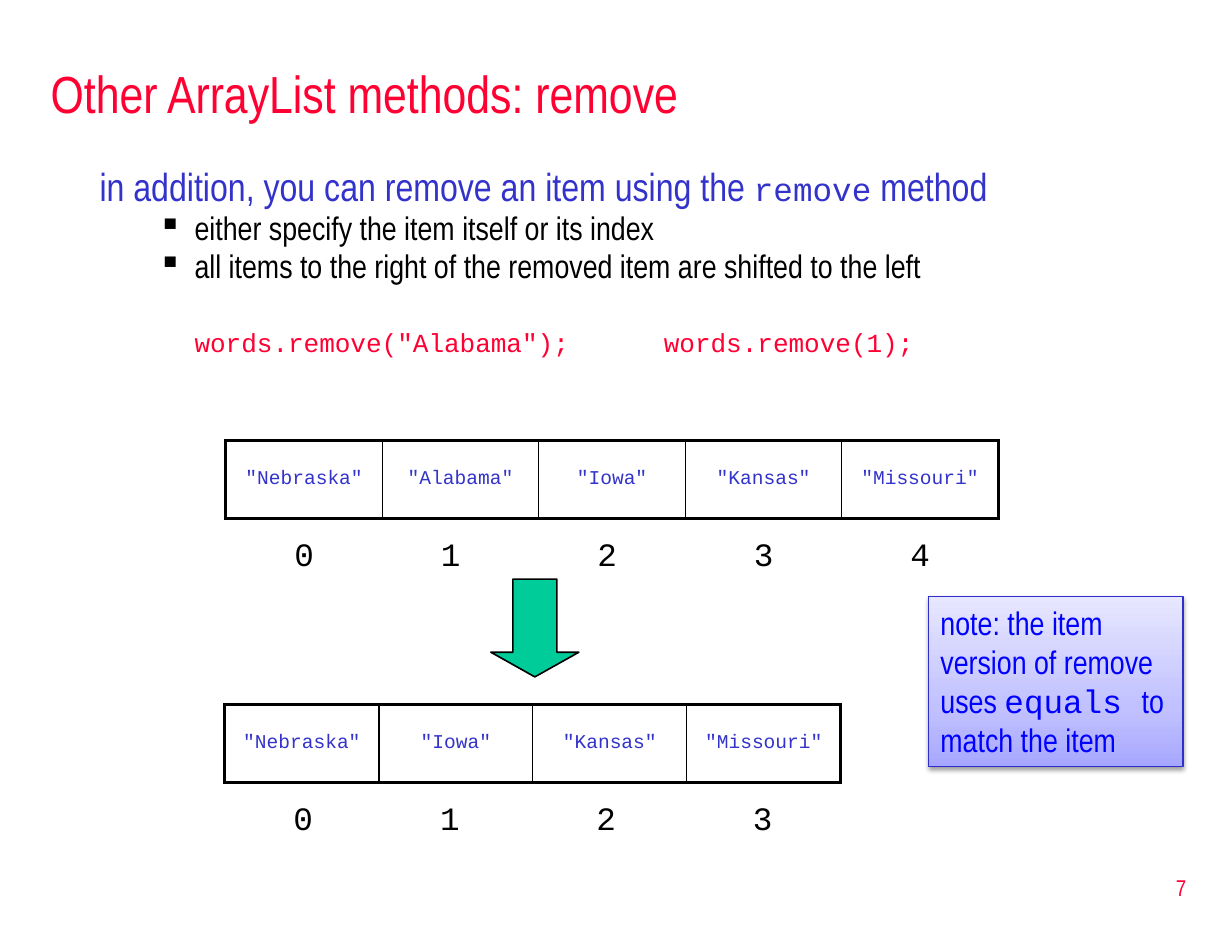
from lxml.etree import SubElement
from pptx import Presentation
from pptx.dml.color import RGBColor as Rgb
from pptx.enum.shapes import MSO_SHAPE as Shape
from pptx.enum.text import MSO_ANCHOR as Anchor, PP_ALIGN as Align
from pptx.oxml import parse_xml
from pptx.oxml.ns import nsdecls, qn
from pptx.util import Inches, Pt

SANS, MONO = "Arial Narrow", "Courier New"
HUES = {
    "red": "FF0033", "blue": "3333CC", "black": "000000", "green": "00CC99",
    "note": "0000FF", "edge": "2E2ECB",
    "deep": "A7A7FF", "mid": "C1C1FF", "pale": "E7E7FF",
}


def hue(name):
    return Rgb.from_string(HUES[name])


def unit(n):
    """Length of n grid cells; the slide is 126 by 96 cells."""
    return Inches(n / 12)


def area(*cells):
    return [unit(n) for n in cells]


def style(font, size, name, color):
    font.size, font.name = Pt(size), name
    font.color.rgb = hue(color)


def write(para, runs, size, color, name=SANS):
    """Fill a paragraph; a run is a text or a (text, font, size) tuple."""
    style(para.font, size, name, color)
    for item in runs:
        text, face, pts = (item, name, size) if isinstance(item, str) else item
        run = para.add_run()
        run.text = text
        style(run.font, pts, face, color)


def label(slide, box, text, size, color, name=SANS, align=Align.LEFT, anchor=Anchor.TOP):
    frame = slide.shapes.add_textbox(*area(*box)).text_frame
    frame.word_wrap = True
    frame.vertical_anchor = anchor
    para = frame.paragraphs[0]
    para.alignment = align
    write(para, [text], size, color, name)


def indent(para, left, first=0):
    props = para._p.get_or_add_pPr()
    props.set("marL", str(Inches(left)))
    props.set("indent", str(Inches(first)))
    return props


def body(slide):
    frame = slide.shapes.add_textbox(*area(9, 16, 114, 23)).text_frame
    frame.word_wrap = True
    lead = frame.paragraphs[0]
    indent(lead, 0.38, -0.38)
    # The lead line starts at the left edge of its hanging indent.
    write(lead, ["in addition, you can remove an item using the ",
                 ("remove", MONO, 20), " method"], 24, "blue")
    for text in ("either specify the item itself or its index",
                 "all items to the right of the removed item are shifted to the left"):
        para = frame.add_paragraph()
        para.line_spacing, para.space_before = 0.8, Pt(4)
        SubElement(indent(para, 0.81, -0.31), qn("a:buChar"), char="▪")
        write(para, [text], 20, "black")
    code = frame.add_paragraph()
    code.line_spacing, code.space_before = 0.8, Pt(29)
    indent(code, 0.81)
    write(code, ['words.remove("Alabama");\t\twords.remove(1);'], 16, "red", MONO)


def border(cell, first, last):
    """Thick rules around the row, thin ones between its cells."""
    props = cell._tc.get_or_add_tcPr()
    sides = {"L": first, "R": last, "T": True, "B": True}
    for spot, (side, thick) in enumerate(sides.items()):
        props.insert(spot, parse_xml(
            f'<a:ln{side} {nsdecls("a")} w="{Pt(2.25 if thick else 1)}"><a:solidFill>'
            f'<a:srgbClr val="{HUES["black"]}"/></a:solidFill></a:ln{side}>'))


def array(slide, left, top, words, cols):
    """A one-row table of words with each index below its cell."""
    count = len(words)
    table = slide.shapes.add_table(1, count, *area(left, top, sum(cols), 8)).table
    table.first_row = table.horz_banding = False
    for i, (word, width) in enumerate(zip(words, cols)):
        table.columns[i].width = unit(width)
        cell = table.cell(0, i)
        cell.fill.background()
        cell.vertical_anchor = Anchor.MIDDLE
        border(cell, i == 0, i == count - 1)
        para = cell.text_frame.paragraphs[0]
        para.alignment = Align.CENTER
        write(para, [f'"{word}"'], 12, "blue", MONO)
        label(slide, (left + max(1, 16 * i), top + 9, 14, 5.2),
              str(i), 20, "black", MONO, Align.CENTER)


def arrow(slide):
    shape = slide.shapes.add_shape(Shape.DOWN_ARROW, *area(50.2, 59.2, 9, 10))
    shape.adjustments[1] = 0.28
    shape.shadow.inherit = False
    shape.fill.solid()
    shape.fill.fore_color.rgb = hue("green")
    shape.line.color.rgb = hue("black")
    shape.line.width = Pt(1)


def note(slide):
    shape = slide.shapes.add_shape(Shape.RECTANGLE, *area(95, 61, 26, 17.4))
    shape.shadow.inherit = False
    shape.line.color.rgb = hue("edge")
    shape.line.width = Pt(0.75)
    props = shape._element.spPr
    stops = "".join(f'<a:gs pos="{pos}000"><a:srgbClr val="{HUES[name]}"/></a:gs>'
                    for pos, name in ((0, "deep"), (35, "mid"), (100, "pale")))
    props.find(qn("a:prstGeom")).addnext(parse_xml(
        f'<a:gradFill {nsdecls("a")} rotWithShape="1"><a:gsLst>{stops}</a:gsLst>'
        '<a:lin ang="16200000" scaled="0"/></a:gradFill>'))
    props.find(qn("a:effectLst")).append(parse_xml(
        f'<a:outerShdw {nsdecls("a")} blurRad="{Pt(3.1)}" dist="{Pt(1.6)}" dir="5400000" '
        f'rotWithShape="0"><a:srgbClr val="{HUES["black"]}"><a:alpha val="38000"/>'
        '</a:srgbClr></a:outerShdw>'))
    frame = shape.text_frame
    frame.word_wrap = True
    frame.vertical_anchor = Anchor.TOP
    para = frame.paragraphs[0]
    para.alignment = Align.LEFT
    write(para, ["note: the item version of remove uses ",
                 ("equals ", MONO, 20), "to match the item"], 20, "note")


def main():
    deck = Presentation()
    deck.slide_width, deck.slide_height = area(126, 96)
    slide = deck.slides.add_slide(deck.slide_layouts[6])
    label(slide, (96.2, 87.5, 26.3, 6.4), "7", 14, "red",
          align=Align.RIGHT, anchor=Anchor.MIDDLE)
    label(slide, (4, 5, 119, 9), "Other ArrayList methods: remove", 32, "red",
          anchor=Anchor.MIDDLE)
    body(slide)
    words = ["Nebraska", "Alabama", "Iowa", "Kansas", "Missouri"]
    array(slide, 23.1, 45, words, [16, 16, 15, 16, 16])
    words.remove("Alabama")
    array(slide, 23, 72, words, [15.75] * 4)
    arrow(slide)
    note(slide)
    deck.save("out.pptx")


if __name__ == "__main__":
    main()
